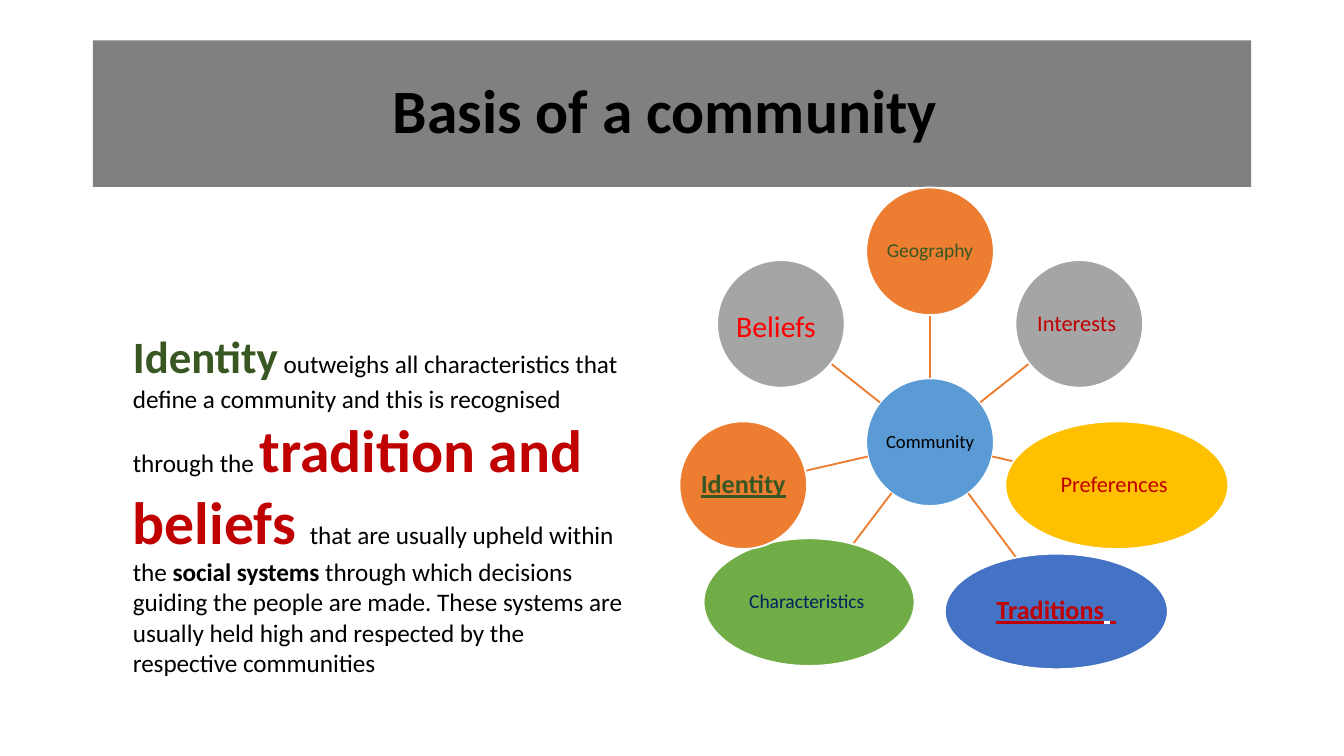
import math

from lxml import etree
from pptx import Presentation
from pptx.dml.color import RGBColor
from pptx.enum.shapes import MSO_CONNECTOR, MSO_SHAPE
from pptx.enum.text import MSO_ANCHOR, PP_ALIGN
from pptx.oxml.ns import qn
from pptx.util import Inches, Pt

RECTANGLE, OVAL = MSO_SHAPE.RECTANGLE, MSO_SHAPE.OVAL
STRAIGHT = MSO_CONNECTOR.STRAIGHT
MIDDLE, CENTER = MSO_ANCHOR.MIDDLE, PP_ALIGN.CENTER

FONT = "Calibri"
COLORS = {
    "black": "000000", "white": "FFFFFF", "banner": "808080",
    "blue": "5B9BD5", "orange": "ED7D31", "gray": "A5A5A5",
    "gold": "FFC000", "royal": "4472C4", "green": "70AD47",
    "forest": "385723", "crimson": "C00000", "red": "FF0000", "navy": "002060",
}

HUB_SIZE = 0.95
# Centre offset from the hub, size, fill, runs of (text, size, colour, emphasised)
NODES = [
    ((0, -1.42), (0.95, 0.95), "orange", [("Geography ", 10.5, "forest", False)]),
    ((1.11, -0.88), (0.95, 0.95), "gray", [("Interests ", 12, "crimson", False)]),
    ((1.39, 0.32), (1.66, 0.95), "gold", [("Preferences ", 12, "crimson", False)]),
    ((0.94, 1.26), (1.66, 0.86), "royal", [
        ("Traditions", 14, "crimson", True),
        (" ", 14, "white", True),
        (" ", 14, "crimson", True)]),
    ((-0.9, 1.19), (1.57, 0.95), "green", [("Characteristics ", 10.5, "navy", False)]),
    ((-1.39, 0.32), (0.95, 0.95), "orange", [("Identity", 14, "forest", True)]),
    ((-1.11, -0.88), (0.95, 0.95), "gray", [
        ("Beliefs", 16, "red", False), (" ", 23, "white", False)]),
]

STATEMENT = [
    ("Identity", 24, "forest", True),
    (" outweighs all characteristics that define a community and this is "
     "recognised through the ", 13.5, "black", False),
    ("tradition and beliefs ", 32, "crimson", True),
    ("that are usually upheld within the ", 13.5, "black", False),
    ("social systems ", 13.5, "black", True),
    ("through which decisions guiding the people are made. These systems are "
     "usually held high and respected by the respective communities",
     13.5, "black", False),
]


def rgb(name):
    return RGBColor.from_string(COLORS[name])


def write_runs(paragraph, runs, underline_bold=False):
    paragraph.font.name = FONT
    for text, size, color, bold in runs:
        run = paragraph.add_run()
        run.text = text
        run.font.name = FONT
        run.font.size = Pt(size)
        run.font.color.rgb = rgb(color)
        run.font.bold = bold
        if bold and underline_bold:
            run.font.underline = True


def add_filled(slide, preset, box, fill, runs):
    """Filled shape with one centred line of text."""
    shape = slide.shapes.add_shape(preset, *map(Inches, box))
    shape.shadow.inherit = False
    shape.fill.solid()
    shape.fill.fore_color.rgb = rgb(fill)
    frame = shape.text_frame
    frame.word_wrap = True
    frame.vertical_anchor = MIDDLE
    paragraph = frame.paragraphs[0]
    paragraph.alignment = CENTER
    paragraph.line_spacing = 0.9
    write_runs(paragraph, runs, underline_bold=preset == OVAL)
    return shape


def add_banner(slide, box):
    banner = add_filled(slide, RECTANGLE, box, "banner",
                        [("Basis of a community ", 33, "black", True)])
    banner.line.fill.background()


def add_statement(slide, box):
    frame = slide.shapes.add_textbox(*map(Inches, box)).text_frame
    frame.word_wrap = True
    write_runs(frame.paragraphs[0], STATEMENT)


def add_bubble(slide, center, size, fill, runs):
    (x, y), (width, height) = center, size
    bubble = add_filled(slide, OVAL, (x - width / 2, y - height / 2, width, height),
                        fill, runs)
    bubble.line.color.rgb = rgb("white")
    bubble.line.width = Pt(1)
    frame = bubble.text_frame
    frame.margin_left = frame.margin_right = 0
    frame.margin_top = frame.margin_bottom = Inches(0.01)


def add_spoke(slide, hub, offset, size):
    """Line from the hub's edge to the edge of the bubble at the offset."""
    dx, dy = offset
    distance = math.hypot(dx, dy)
    ux, uy = dx / distance, dy / distance
    edge = 1 / math.hypot(2 * ux / size[0], 2 * uy / size[1])
    ends = [hub[axis] + reach * unit
            for reach in (HUB_SIZE / 2, distance - edge)
            for axis, unit in enumerate((ux, uy))]
    spoke = slide.shapes.add_connector(STRAIGHT, *map(Inches, ends))
    spoke.line.color.rgb = rgb("orange")
    spoke.line.width = Pt(1)
    etree.SubElement(spoke._element.spPr, qn("a:effectLst"))


def add_community_wheel(slide, hub):
    add_bubble(slide, hub, (HUB_SIZE, HUB_SIZE), "blue",
               [("Community ", 10, "black", False)])
    for offset, size, fill, runs in NODES:
        add_spoke(slide, hub, offset, size)
        center = (hub[0] + offset[0], hub[1] + offset[1])
        add_bubble(slide, center, size, fill, runs)


def main():
    deck = Presentation()
    # Widescreen 16:9
    deck.slide_width = Inches(10)
    deck.slide_height = deck.slide_width * 9 // 16
    slide = deck.slides.add_slide(deck.slide_layouts[6])
    add_banner(slide, (0.69, 0.3, 8.62, 1.09))
    add_community_wheel(slide, (6.92, 3.29))
    add_statement(slide, (0.89, 2.4, 3.88, 2.72))
    deck.save("out.pptx")


if __name__ == "__main__":
    main()
